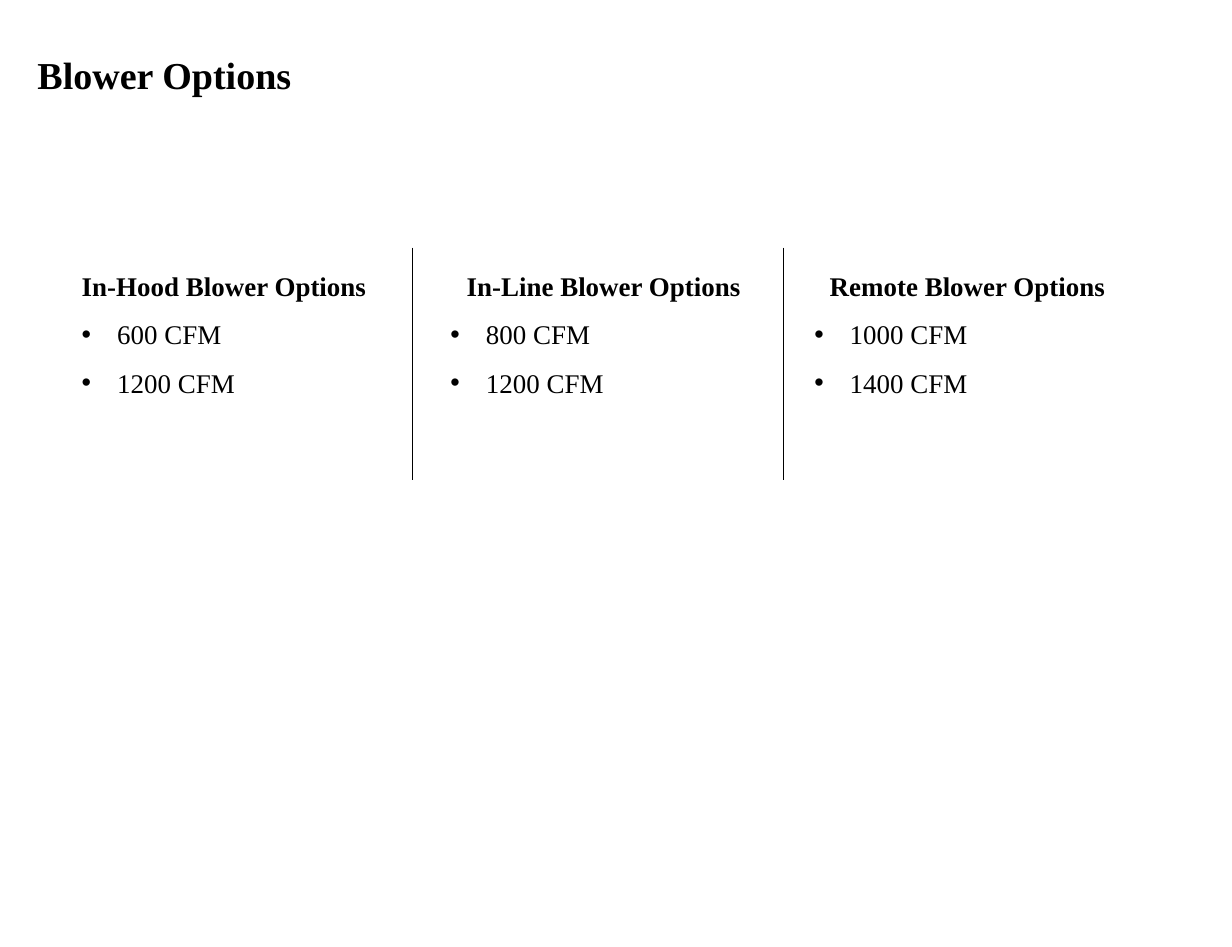
from lxml import etree
from pptx import Presentation
from pptx.dml.color import RGBColor
from pptx.enum.shapes import MSO_CONNECTOR
from pptx.enum.text import MSO_ANCHOR, MSO_AUTO_SIZE, PP_ALIGN
from pptx.oxml.ns import qn
from pptx.util import Cm, Pt

STRAIGHT = MSO_CONNECTOR.STRAIGHT
TOP = MSO_ANCHOR.TOP
NO_AUTOFIT = MSO_AUTO_SIZE.NONE
LEFT, CENTER = PP_ALIGN.LEFT, PP_ALIGN.CENTER

BLACK = "000000"
COLUMN_TOP, COLUMN_WIDTH, COLUMN_HEIGHT = 5.51, 7.32, 3.53
DIVIDER_BOTTOM = 10.69
BULLET_INDENT = Cm(0.79)
TITLE_FONT = {"name": "Times New Roman", "size": Pt(24), "bold": True}
HEADING_FONT = {**TITLE_FONT, "size": Pt(17)}
ITEM_FONT = {**HEADING_FONT, "bold": False}

COLUMNS = [
    (1.57, LEFT, "In-Hood Blower Options", ["600 CFM", "1200 CFM"]),
    (9.78, CENTER, "In-Line Blower Options", ["800 CFM", "1200 CFM"]),
    (17.88, CENTER, "Remote Blower Options", ["1000 CFM", "1400 CFM"]),
]
DIVIDERS = [9.19, 17.45]


def color(value):
    """Return the colour for a hex string."""
    return RGBColor.from_string(value)


def write(p, text, font, align=LEFT):
    """Put one formatted run into a paragraph."""
    p.alignment = align
    r = p.add_run()
    r.text = text
    for name, value in font.items():
        setattr(r.font, name, value)
    r.font.color.rgb = color(BLACK)


def add_bullet(p):
    """Give a paragraph a round bullet with a hanging indent."""
    pPr = p._p.get_or_add_pPr()
    pPr.set("marL", str(BULLET_INDENT))
    pPr.set("indent", str(-BULLET_INDENT))
    etree.SubElement(pPr, qn("a:buFont")).set("typeface", "Arial")
    etree.SubElement(pPr, qn("a:buChar")).set("char", "•")


def add_title(s, text):
    """Place and format the slide title."""
    sp = s.shapes.title
    sp.left, sp.top, sp.width, sp.height = Cm(0.58), Cm(1.02), Cm(6.22), Cm(1.27)
    tf = sp.text_frame
    tf.auto_size = NO_AUTOFIT
    tf.word_wrap = False
    tf.vertical_anchor = TOP
    write(tf.paragraphs[0], text, TITLE_FONT)


def add_column(s, left, align, heading, items):
    """Add a text column with a heading and bulleted items."""
    sp = s.shapes.add_textbox(Cm(left), Cm(COLUMN_TOP), Cm(COLUMN_WIDTH), Cm(COLUMN_HEIGHT))
    tf = sp.text_frame
    tf.word_wrap = True
    write(tf.paragraphs[0], heading, HEADING_FONT, align)
    for item in items:
        p = tf.add_paragraph()
        add_bullet(p)
        write(p, item, ITEM_FONT)
    for p in tf.paragraphs:
        p.line_spacing = 1.5


def add_divider(s, x):
    """Add a thin vertical line between columns."""
    line = s.shapes.add_connector(STRAIGHT, Cm(x), Cm(COLUMN_TOP), Cm(x), Cm(DIVIDER_BOTTOM))
    line.line.color.rgb = color(BLACK)
    line.line.width = Pt(0.75)
    etree.SubElement(line._element.spPr, qn("a:effectLst"))


def main():
    """Build the blower options slide."""
    prs = Presentation()
    prs.slide_width, prs.slide_height = Cm(27.43), Cm(21.08)
    s = prs.slides.add_slide(prs.slide_layouts[5])
    add_title(s, "Blower Options")
    for column in COLUMNS:
        add_column(s, *column)
    for x in DIVIDERS:
        add_divider(s, x)
    prs.save("out.pptx")


if __name__ == "__main__":
    main()
